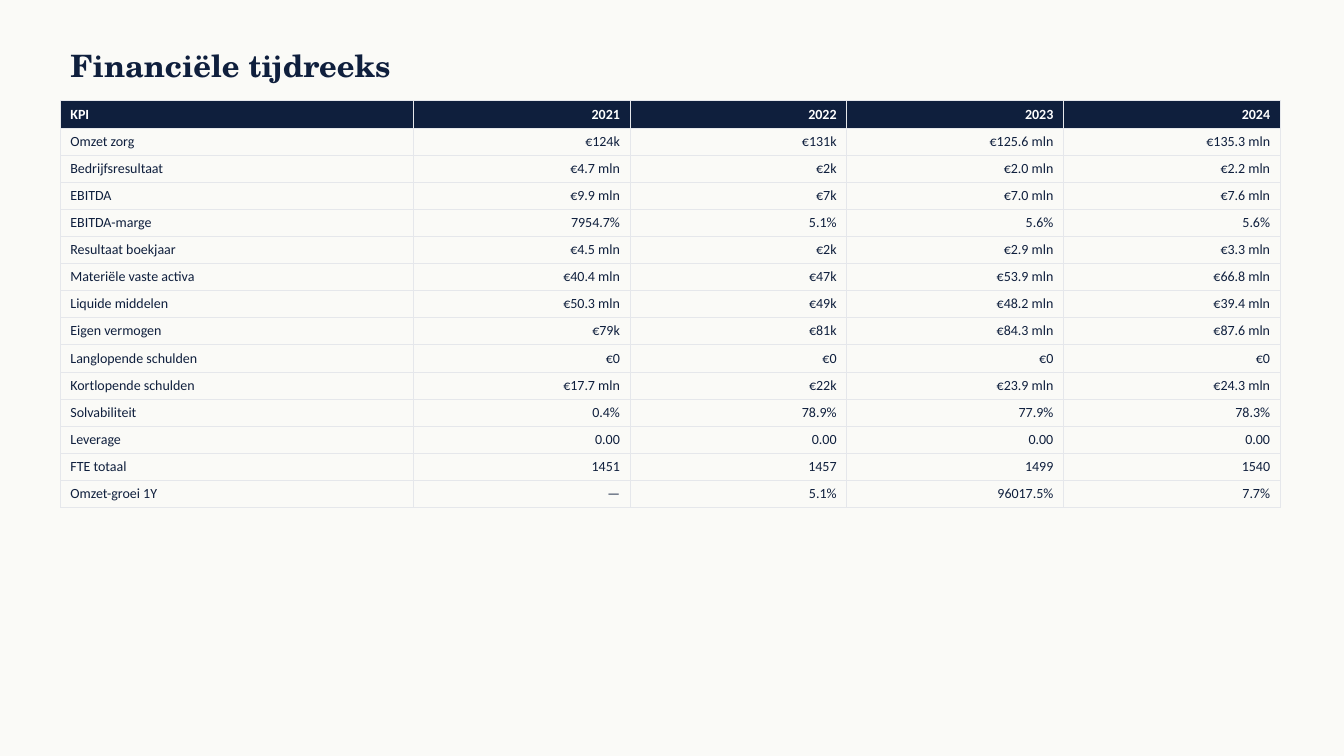
from lxml import etree
from pptx import Presentation
from pptx.dml.color import RGBColor
from pptx.enum.text import MSO_ANCHOR, MSO_AUTO_SIZE, PP_ALIGN
from pptx.oxml.ns import qn
from pptx.util import Cm, Pt

LEFT, RIGHT = PP_ALIGN.LEFT, PP_ALIGN.RIGHT
MIDDLE = MSO_ANCHOR.MIDDLE
NO_AUTOFIT = MSO_AUTO_SIZE.NONE
TITLE_ONLY = 5

COLORS = {"paper": "FAFAF7", "navy": "0F1F3D", "white": "FFFFFF", "grid": "E5E7EB"}
HEADING_FONT, BODY_FONT = "TeX Gyre Schola", "Calibri"

ROWS = [
    ("KPI", "2021", "2022", "2023", "2024"),
    ("Omzet zorg", "€124k", "€131k", "€125.6 mln", "€135.3 mln"),
    ("Bedrijfsresultaat", "€4.7 mln", "€2k", "€2.0 mln", "€2.2 mln"),
    ("EBITDA", "€9.9 mln", "€7k", "€7.0 mln", "€7.6 mln"),
    ("EBITDA-marge", "7954.7%", "5.1%", "5.6%", "5.6%"),
    ("Resultaat boekjaar", "€4.5 mln", "€2k", "€2.9 mln", "€3.3 mln"),
    ("Materiële vaste activa", "€40.4 mln", "€47k", "€53.9 mln", "€66.8 mln"),
    ("Liquide middelen", "€50.3 mln", "€49k", "€48.2 mln", "€39.4 mln"),
    ("Eigen vermogen", "€79k", "€81k", "€84.3 mln", "€87.6 mln"),
    ("Langlopende schulden", "€0", "€0", "€0", "€0"),
    ("Kortlopende schulden", "€17.7 mln", "€22k", "€23.9 mln", "€24.3 mln"),
    ("Solvabiliteit", "0.4%", "78.9%", "77.9%", "78.3%"),
    ("Leverage", "0.00", "0.00", "0.00", "0.00"),
    ("FTE totaal", "1451", "1457", "1499", "1540"),
    ("Omzet-groei 1Y", "—", "5.1%", "96017.5%", "7.7%"),
]


class Deck:
    def __init__(self, width, height):
        self.prs = Presentation()
        self.prs.slide_width, self.prs.slide_height = Cm(width), Cm(height)
        self.slide = None

    def color(self, name):
        return RGBColor.from_string(COLORS[name])

    def add_slide(self):
        self.slide = self.prs.slides.add_slide(self.prs.slide_layouts[TITLE_ONLY])
        fill = self.slide.background.fill
        fill.solid()
        fill.fore_color.rgb = self.color("paper")

    def set_text(self, tf, text, font, size, color, bold=False, align=LEFT):
        tf.text = text
        p = tf.paragraphs[0]
        p.alignment = align
        r = p.runs[0]
        r.font.name, r.font.size, r.font.bold = font, Pt(size), bold
        r.font.color.rgb = self.color(color)

    def title(self, text, left, top, width, height):
        sp = self.slide.shapes.title
        sp.left, sp.top, sp.width, sp.height = Cm(left), Cm(top), Cm(width), Cm(height)
        tf = sp.text_frame
        tf.auto_size, tf.vertical_anchor, tf.word_wrap = NO_AUTOFIT, MIDDLE, True
        self.set_text(tf, text, HEADING_FONT, 22, "navy", bold=True)

    def borders(self, cell):
        tc_pr = cell._tc.get_or_add_tcPr()
        for side in ("lnL", "lnR", "lnT", "lnB"):
            ln = etree.SubElement(tc_pr, qn(f"a:{side}"), w=str(Pt(0.5)))
            fill = etree.SubElement(ln, qn("a:solidFill"))
            etree.SubElement(fill, qn("a:srgbClr"), val=COLORS["grid"])

    def table(self, rows, left, top, col_widths, row_height):
        frame = self.slide.shapes.add_table(
            len(rows), len(col_widths), Cm(left), Cm(top),
            Cm(sum(col_widths)), Cm(row_height * len(rows)))
        table = frame.table
        table.horz_banding = False
        for column, width in zip(table.columns, col_widths):
            column.width = Cm(width)
        for i, values in enumerate(rows):
            table.rows[i].height = Cm(row_height)
            header = i == 0
            for j, value in enumerate(values):
                cell = table.cell(i, j)
                self.borders(cell)
                if header:
                    cell.fill.solid()
                    cell.fill.fore_color.rgb = self.color("navy")
                else:
                    cell.fill.background()
                self.set_text(cell.text_frame, value, BODY_FONT, 10,
                              "white" if header else "navy", header, RIGHT if j else LEFT)


def main():
    deck = Deck(33.86, 19.05)
    deck.add_slide()
    deck.title("Financiële tijdreeks", 1.52, 1.02, 30.48, 1.27)
    deck.table(ROWS, 1.52, 2.54, [8.89] + [5.46] * 4, 0.68)
    deck.prs.save("out.pptx")


if __name__ == "__main__":
    main()
